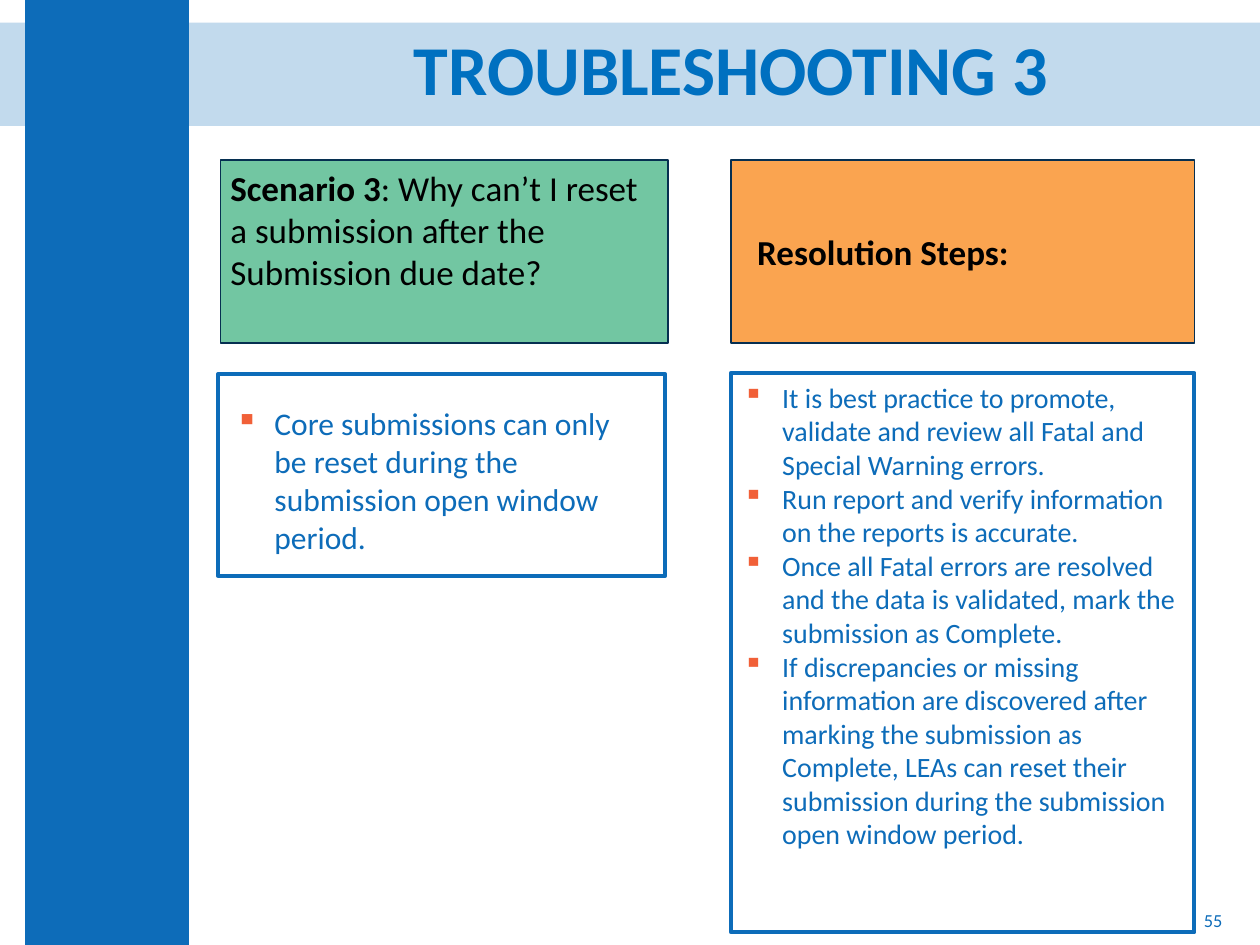
from typing import NamedTuple, Optional

from lxml.etree import SubElement
from pptx import Presentation
from pptx.dml.color import RGBColor
from pptx.enum.shapes import MSO_SHAPE
from pptx.enum.text import MSO_ANCHOR, PP_ALIGN
from pptx.oxml.ns import qn
from pptx.util import Inches, Pt

BLUE = RGBColor(0x0D, 0x6C, 0xB9)
TITLE_BLUE = RGBColor(0x00, 0x70, 0xC0)
NAVY = RGBColor(0x06, 0x2F, 0x51)
GREEN = RGBColor(0x72, 0xC6, 0xA2)
ORANGE = RGBColor(0xFA, 0xA4, 0x50)
BULLET_RED = RGBColor(0xF1, 0x60, 0x38)
BLACK = RGBColor(0x00, 0x00, 0x00)

FONT = "Calibri"
COLUMNS, ROWS = 10, 7.5
CELL = Inches(1)
HANGING = 0.31
LEFT_COLUMN, RIGHT_COLUMN = 1.73, 5.8
LEFT_WIDTH, RIGHT_WIDTH = 3.55, 3.68
HEADER_TOP, HEADER_HEIGHT = 1.27, 1.45


class Area(NamedTuple):
    column: float
    row: float
    columns: float
    rows: float

    def lengths(self) -> list[int]:
        return [round(CELL * share) for share in self]


class Panel(NamedTuple):
    area: Area
    fill: Optional[RGBColor] = None
    line: Optional[RGBColor] = None
    weight: float = 1
    opacity: int = 100


class Style(NamedTuple):
    size: float
    color: RGBColor = BLUE
    bold: bool = False
    align: PP_ALIGN = PP_ALIGN.LEFT
    spacing: float = 1.0
    bulleted: bool = False


class Copy(NamedTuple):
    area: Area
    paragraphs: list[list[str]]
    style: Style
    anchor: MSO_ANCHOR = MSO_ANCHOR.TOP


HEADER_RIGHT = Area(RIGHT_COLUMN, HEADER_TOP, RIGHT_WIDTH, HEADER_HEIGHT)

PANELS = [
    Panel(Area(0, 0.18, COLUMNS, 0.82), fill=BLUE, opacity=25),
    Panel(Area(0.2, 0, 1.3, ROWS), fill=BLUE),
    Panel(Area(1.75, HEADER_TOP, LEFT_WIDTH, HEADER_HEIGHT), GREEN, NAVY),
    Panel(Area(LEFT_COLUMN, 2.97, LEFT_WIDTH, 1.6), line=BLUE, weight=2.25),
    Panel(Area(RIGHT_COLUMN, 2.96, RIGHT_WIDTH, 4.44), line=BLUE, weight=2.25),
]
RESOLUTION_PANEL = Panel(HEADER_RIGHT, ORANGE, NAVY)

COPIES = [
    Copy(
        Area(1.9, 0.17, 7.8, 0.82),
        [["TROUBLESHOOTING 3"]],
        Style(40, TITLE_BLUE, True, PP_ALIGN.CENTER, 0.9),
        MSO_ANCHOR.MIDDLE,
    ),
    Copy(
        Area(LEFT_COLUMN, HEADER_TOP, 3.5, 1.11),
        [["Scenario 3", ": Why can’t I reset a submission after the Submission due date?"]],
        Style(20, BLACK),
    ),
    Copy(
        Area(7.55, 7.1, 2.25, 0.4),
        [["55"]],
        Style(10.5, align=PP_ALIGN.RIGHT),
        MSO_ANCHOR.MIDDLE,
    ),
    Copy(
        Area(1.77, 3.16, 3.48, 1.62),
        [["Core submissions can only be reset during the submission open window period."]],
        Style(18, bulleted=True),
    ),
    Copy(
        Area(RIGHT_COLUMN, 2.97, RIGHT_WIDTH, 4.12),
        [
            ["It is best practice to promote, validate and review all Fatal and Special Warning errors."],
            ["Run report and verify information on the reports is accurate."],
            ["Once all Fatal errors are resolved and the data is validated, mark the submission as Complete."],
            ["If discrepancies or missing information are discovered after marking the submission as "
             "Complete, LEAs can reset their submission during the submission open window period."],
        ],
        Style(16, bulleted=True),
    ),
]


def add_bullet(paragraph) -> None:
    properties = paragraph._p.get_or_add_pPr()
    properties.set("marL", str(Inches(HANGING)))
    properties.set("indent", str(-Inches(HANGING)))
    color = SubElement(properties, qn("a:buClr"))
    SubElement(color, qn("a:srgbClr"), val=str(BULLET_RED))
    SubElement(properties, qn("a:buChar"), char="▪")


def write(frame, paragraphs: list[list[str]], style: Style, anchor: MSO_ANCHOR) -> None:
    frame.word_wrap = True
    frame.vertical_anchor = anchor
    for index, texts in enumerate(paragraphs):
        paragraph = frame.add_paragraph() if index else frame.paragraphs[0]
        paragraph.alignment = style.align
        paragraph.line_spacing = style.spacing
        if style.bulleted:
            add_bullet(paragraph)
        paragraph.font.name = FONT
        paragraph.font.size = Pt(style.size)
        paragraph.font.color.rgb = style.color
        paragraph.font.bold = style.bold
        for position, text in enumerate(texts):
            span = paragraph.add_run()
            span.text = text
            if len(texts) > 1:
                span.font.bold = position == 0


def add_panel(page, panel: Panel):
    shape = page.shapes.add_shape(MSO_SHAPE.RECTANGLE, *panel.area.lengths())
    shape.shadow.inherit = False
    if panel.fill is None:
        shape.fill.background()
    else:
        shape.fill.solid()
        shape.fill.fore_color.rgb = panel.fill
    if panel.opacity < 100:
        color = shape._element.spPr.find(qn("a:solidFill")).find(qn("a:srgbClr"))
        SubElement(color, qn("a:alpha"), val=str(panel.opacity * 1000))
    if panel.line is None:
        shape.line.fill.background()
    else:
        shape.line.color.rgb = panel.line
        shape.line.width = Pt(panel.weight)
    return shape


def add_copy(page, copy: Copy) -> None:
    box = page.shapes.add_textbox(*copy.area.lengths())
    write(box.text_frame, copy.paragraphs, copy.style, copy.anchor)


def main() -> None:
    deck = Presentation()
    deck.slide_width = CELL * COLUMNS
    deck.slide_height = round(CELL * ROWS)
    page = deck.slides.add_slide(deck.slide_layouts[6])
    for panel in PANELS:
        add_panel(page, panel)
    resolution = add_panel(page, RESOLUTION_PANEL).text_frame
    resolution.margin_left = Inches(0.21)
    write(resolution, [["Resolution Steps:"]], Style(20, BLACK, True), MSO_ANCHOR.MIDDLE)
    for copy in COPIES:
        add_copy(page, copy)
    deck.save("out.pptx")


if __name__ == "__main__":
    main()
